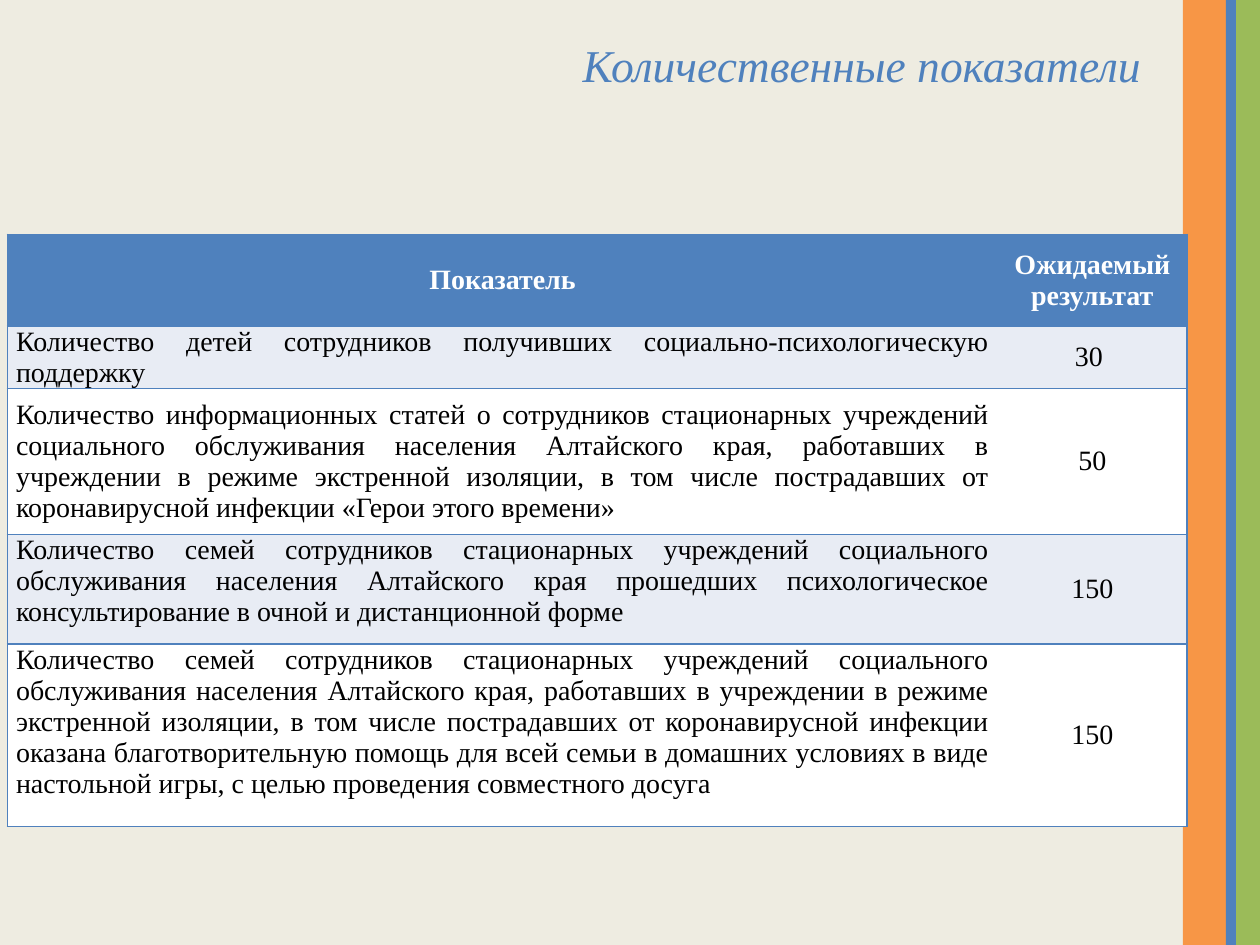
from dataclasses import dataclass

from lxml import etree
from pptx import Presentation
from pptx.dml.color import RGBColor
from pptx.enum import shapes, text
from pptx.oxml.ns import qn
from pptx.util import Pt

CREAM = RGBColor(0xEE, 0xEC, 0xE1)
ORANGE = RGBColor(0xF7, 0x96, 0x46)
BLUE = RGBColor(0x4F, 0x81, 0xBD)
GREEN = RGBColor(0x9B, 0xBB, 0x59)
PALE = RGBColor(0xE8, 0xEC, 0xF4)
WHITE = RGBColor(0xFF, 0xFF, 0xFF)
BLACK = RGBColor(0, 0, 0)
FONT = "Times New Roman"
NO_STYLE = "{2D5ABB26-0587-4C30-8999-92F81FD0307C}"
WIDTH, HEIGHT = 720, 540
MIDDLE, TOP = text.MSO_ANCHOR.MIDDLE, text.MSO_ANCHOR.TOP
ALIGN = text.PP_ALIGN


@dataclass
class Stripe:
    left: float
    width: float
    color: RGBColor


@dataclass
class Row:
    height: float
    indicator: str
    result: str
    anchor: int = MIDDLE


STRIPES = [
    Stripe(676, 25, ORANGE),
    Stripe(706.3, 13.7, GREEN),
    Stripe(700.5, 5.8, BLUE),
]

ROWS = [
    Row(52.4, "Показатель", "Ожидаемый результат"),
    Row(28, "Количество детей сотрудников получивших "
        "социально-психологическую поддержку ", "30 "),
    Row(83.5, "Количество информационных статей о сотрудников стационарных "
        "учреждений социального обслуживания населения Алтайского края, "
        "работавших в учреждении в режиме экстренной изоляции, в том числе "
        "пострадавших от коронавирусной инфекции «Герои этого времени»", "50"),
    Row(62.6, "Количество семей сотрудников стационарных учреждений "
        "социального обслуживания населения Алтайского края прошедших "
        "психологическое консультирование в очной и дистанционной форме",
        "150", TOP),
    Row(104.4, "Количество семей сотрудников стационарных учреждений "
        "социального обслуживания населения Алтайского края, работавших в "
        "учреждении в режиме экстренной изоляции, в том числе пострадавших от "
        "коронавирусной инфекции оказана благотворительную помощь для всей "
        "семьи в домашних условиях в виде настольной игры, с целью проведения "
        "совместного досуга", "150", TOP),
]


def format_text(tf, size: float, color: RGBColor, align, bold=False, italic=False) -> None:
    p = tf.paragraphs[0]
    p.alignment = align
    f = p.runs[0].font
    f.name, f.size, f.bold, f.italic = FONT, Pt(size), bold, italic
    f.color.rgb = color


def add_stripe(s, stripe: Stripe) -> None:
    sp = s.shapes.add_shape(shapes.MSO_SHAPE.RECTANGLE, Pt(stripe.left), 0,
                            Pt(stripe.width), Pt(HEIGHT))
    sp.shadow.inherit = False
    sp.fill.solid()
    sp.fill.fore_color.rgb = stripe.color
    sp.line.fill.background()


def set_borders(cell, sides: str) -> None:
    """Draw 1 pt blue lines; they must come before the fill in the cell XML."""
    tc_pr = cell._tc.get_or_add_tcPr()
    for i, side in enumerate(sides):
        ln = etree.Element(qn(f"a:ln{side}"), w=str(Pt(1)))
        fill = etree.SubElement(ln, qn("a:solidFill"))
        etree.SubElement(fill, qn("a:srgbClr"), val=str(BLUE))
        tc_pr.insert(i, ln)


def fill_cell(cell, words: str, fill: RGBColor, anchor, sides: str,
              color: RGBColor, align, bold: bool) -> None:
    cell.margin_left = cell.margin_right = Pt(5)
    cell.margin_top = cell.margin_bottom = 0
    cell.vertical_anchor = anchor
    cell.fill.solid()
    cell.fill.fore_color.rgb = fill
    set_borders(cell, sides)
    cell.text_frame.text = words
    format_text(cell.text_frame, 16, color, align, bold)


def add_indicator_table(s, rows: list[Row]) -> None:
    widths = (566, 108)
    tbl = s.shapes.add_table(len(rows), 2, Pt(4.2), Pt(134), Pt(sum(widths)),
                             Pt(sum(row.height for row in rows))).table
    tbl._tbl.tblPr.find(qn("a:tableStyleId")).text = NO_STYLE
    for col, width in zip(tbl.columns, widths):
        col.width = Pt(width)
    for i, row in enumerate(rows):
        tbl.rows[i].height = Pt(row.height)
        head = i == 0
        fill = BLUE if head else (PALE if i % 2 else WHITE)
        color = WHITE if head else BLACK
        align = ALIGN.CENTER if head else ALIGN.JUSTIFY
        fill_cell(tbl.cell(i, 0), row.indicator, fill, row.anchor, "LTB",
                  color, align, head)
        fill_cell(tbl.cell(i, 1), row.result, fill, MIDDLE, "RTB",
                  color, ALIGN.CENTER, head)


def main() -> None:
    prs = Presentation()
    prs.slide_width, prs.slide_height = Pt(WIDTH), Pt(HEIGHT)
    s = prs.slides.add_slide(prs.slide_layouts[5])
    s.background.fill.solid()
    s.background.fill.fore_color.rgb = CREAM

    # Stripes along the right edge
    for stripe in STRIPES:
        add_stripe(s, stripe)

    # Title
    title = s.shapes.title
    title.left, title.top, title.width, title.height = Pt(96), Pt(12), Pt(570), Pt(54)
    tf = title.text_frame
    tf.text = "Количественные показатели "
    tf.vertical_anchor = MIDDLE
    tf.paragraphs[0].line_spacing = 0.9
    format_text(tf, 26, BLUE, ALIGN.RIGHT, italic=True)

    # Indicators and expected results
    add_indicator_table(s, ROWS)
    prs.save("out.pptx")


if __name__ == "__main__":
    main()
